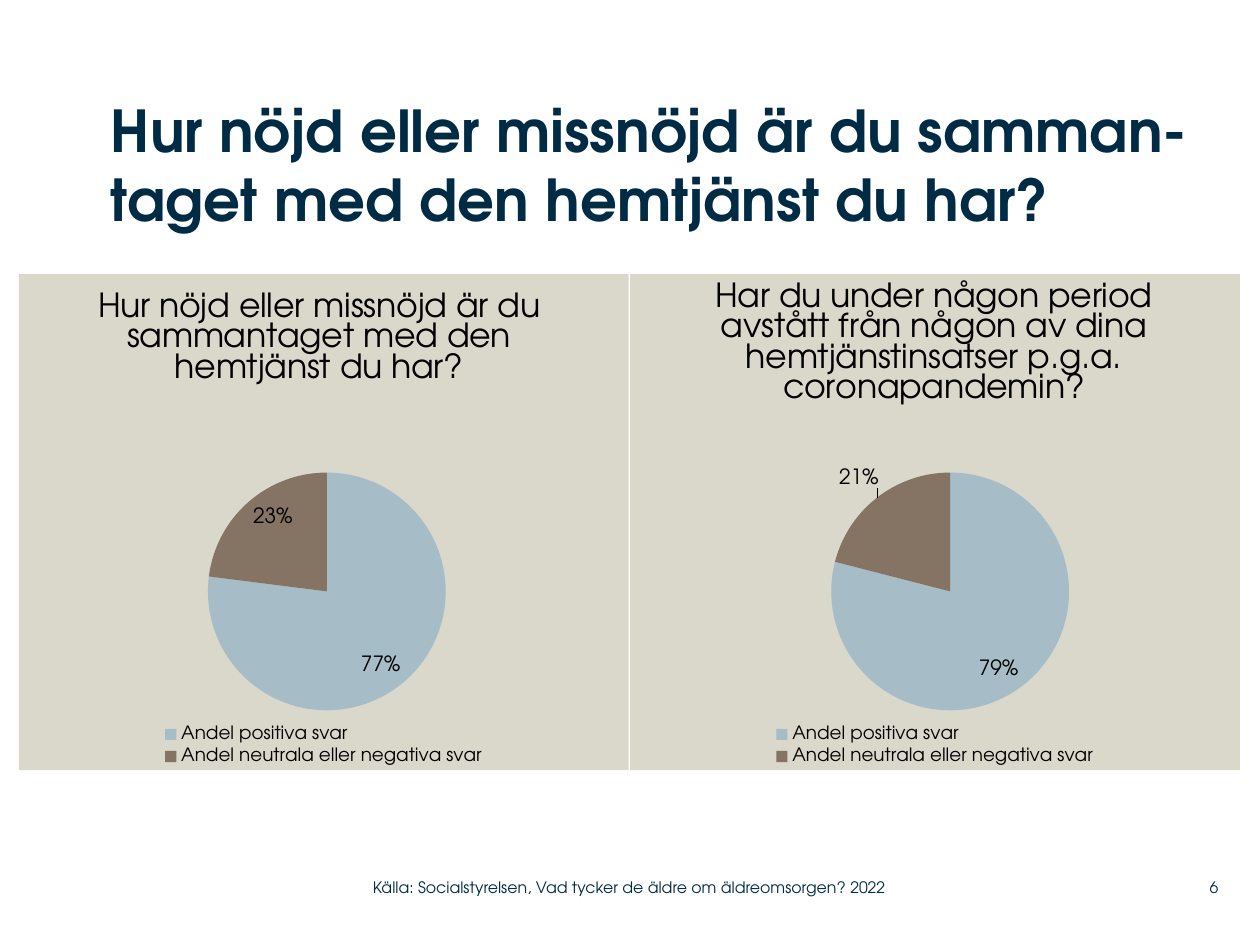
from dataclasses import dataclass
from lxml import etree
from pptx import Presentation
from pptx.chart.data import CategoryChartData
from pptx.dml.color import RGBColor
from pptx.enum.chart import XL_CHART_TYPE, XL_LABEL_POSITION, XL_LEGEND_POSITION
from pptx.enum.text import MSO_ANCHOR, PP_ALIGN
from pptx.oxml import parse_xml
from pptx.oxml.ns import nsdecls, qn
from pptx.util import Inches, Pt

NAVY = RGBColor(0x00, 0x2B, 0x45)
BLACK = RGBColor(0x00, 0x00, 0x00)
SAND = RGBColor(0xDA, 0xD7, 0xCB)
BLUE = RGBColor(0xA6, 0xBC, 0xC6)
BROWN = RGBColor(0x85, 0x73, 0x63)
PIE = XL_CHART_TYPE.PIE
INSIDE_END = XL_LABEL_POSITION.INSIDE_END
BOTTOM = XL_LEGEND_POSITION.BOTTOM
TOP, MIDDLE = MSO_ANCHOR.TOP, MSO_ANCHOR.MIDDLE
LEFT, RIGHT = PP_ALIGN.LEFT, PP_ALIGN.RIGHT
ANSWERS = ["Andel positiva svar", "Andel neutrala eller negativa svar"]


def manual_layout(inner=False, edge=True, **shares):
    layout = parse_xml(f"<c:layout {nsdecls('c')}><c:manualLayout/></c:layout>")
    settings = {"layoutTarget": "inner"} if inner else {}
    if edge:
        settings.update(xMode="edge", yMode="edge")
    settings.update(shares)
    for name, value in settings.items():
        etree.SubElement(layout[0], qn(f"c:{name}")).set("val", str(value))
    return layout


@dataclass
class SlideBuilder:
    deck: object
    slide: object
    font_name: str = "TeX Gyre Adventor"

    def place(self, left, top, width, height):
        wide, high = self.deck.slide_width, self.deck.slide_height
        return int(left * wide), int(top * high), int(width * wide), int(height * high)

    def style(self, font, size, color, bold=False):
        font.name = self.font_name
        font.size = Pt(size)
        font.bold = bold
        font.color.rgb = color

    def text(self, lines, area, size, bold=False, align=LEFT, anchor=MIDDLE):
        box = self.slide.shapes.add_textbox(*self.place(*area))
        frame = box.text_frame
        frame.word_wrap = True
        frame.vertical_anchor = anchor
        frame.margin_left = frame.margin_right = 0
        frame.margin_top = frame.margin_bottom = 0
        para = frame.paragraphs[0]
        para.text = "\v".join(lines)
        para.alignment = align
        self.style(para.font, size, NAVY, bold)

    def pie(self, question, values, area, title_at, plot, label_shift=None):
        data = CategoryChartData()
        data.categories = ANSWERS
        data.add_series("Series 1", values)
        chart = self.slide.shapes.add_chart(PIE, *self.place(*area), data).chart
        self.style(chart.font, 18, BLACK)
        self.background(chart)

        title = chart.chart_title
        para = title.text_frame.paragraphs[0]
        para.text = question
        self.style(para.font, 19, BLACK)
        title.include_in_layout = False
        title_element = title._element
        for old in title_element.findall(qn("c:layout")):
            title_element.remove(old)
        title_element.find(qn("c:tx")).addnext(manual_layout(x=title_at[0], y=title_at[1]))

        chart.has_legend = True
        chart.legend.position = BOTTOM
        chart.legend.include_in_layout = False
        self.style(chart.legend.font, 10.5, BLACK)

        pie = chart.plots[0]
        pie.vary_by_categories = True
        series = pie.series[0]
        for index, color in enumerate((BLUE, BROWN)):
            fill = series.points[index].format.fill
            fill.solid()
            fill.fore_color.rgb = color
        labels = series.data_labels
        labels.show_percentage = True
        labels.show_value = False
        labels.number_format = "0%"
        labels.number_format_is_linked = False
        labels.position = INSIDE_END
        self.style(labels.font, 12, BLACK)
        if label_shift:
            self.shift_label(series.points[1], label_shift)

        plot_area = chart._chartSpace.chart.plotArea
        for old in plot_area.findall(qn("c:layout")):
            plot_area.remove(old)
        plot_area.insert(0, manual_layout(True, **dict(zip("xywh", plot))))

    def shift_label(self, point, shift):
        label = point.data_label
        self.style(label.font, 12, BLACK)
        label.position = INSIDE_END
        element = label._dLbl
        for name, value in (("showVal", "0"), ("showPercent", "1")):
            element.find(qn(f"c:{name}")).set("val", value)
        element.find(qn("c:idx")).addnext(manual_layout(edge=False, x=shift[0], y=shift[1]))

    def background(self, chart):
        properties = parse_xml(
            f"<c:spPr {nsdecls('c', 'a')}><a:solidFill><a:srgbClr val='{SAND}'/></a:solidFill>"
            "<a:ln><a:noFill/></a:ln></c:spPr>")
        chart._chartSpace.chart.addnext(properties)


def main():
    deck = Presentation()
    deck.slide_width, deck.slide_height = Inches(10), Inches(7.5)
    page = SlideBuilder(deck, deck.slides.add_slide(deck.slide_layouts[6]))
    page.text(["Hur nöjd eller missnöjd är du samman-", "taget med den hemtjänst du har?"],
              (0.088, 0.1, 0.894, 0.19), 33, bold=True, anchor=TOP)
    pies = [
        ("Hur nöjd eller missnöjd är du sammantaget med den hemtjänst du har?",
         (77, 23), (0.12, 0.02), (0.31, 0.4, 0.39, 0.48), None),
        ("Har du under någon period avstått från någon av dina "
         "hemtjänstinsatser p.g.a. coronapandemin?",
         (79, 21), (0.13, 0), (0.33, 0.4, 0.39, 0.48), (-0.07, -0.07)),
    ]
    for column, (question, values, title_at, plot, shift) in enumerate(pies):
        area = (0.015 + column * 0.485, 0.29, 0.484, 0.525)
        page.pie(question, values, area, title_at, plot, shift)
    page.text(["Källa: Socialstyrelsen, Vad tycker de äldre om äldreomsorgen? 2022"],
              (0.296, 0.919, 0.443, 0.039), 9)
    page.text(["6"], (0.92, 0.919, 0.047, 0.039), 9, align=RIGHT)
    deck.save("out.pptx")


if __name__ == "__main__":
    main()
